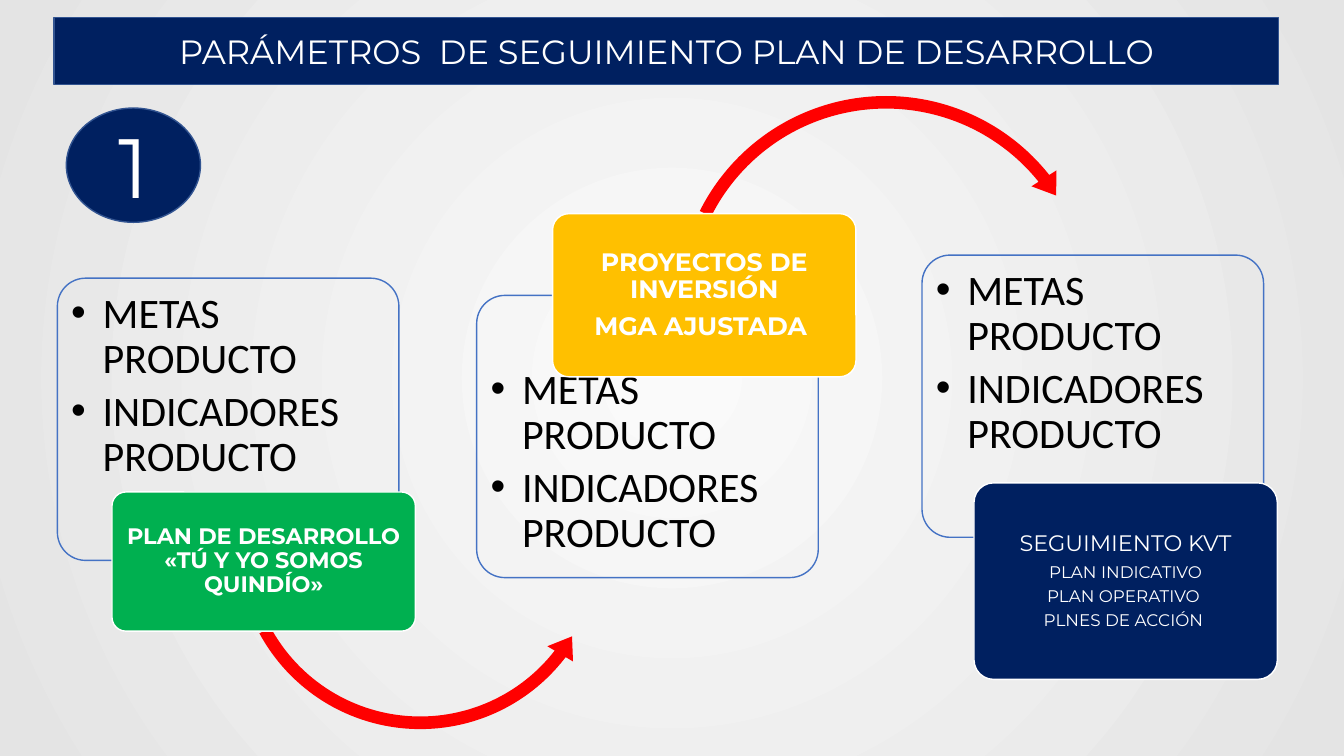
from lxml import etree
from pptx import Presentation
from pptx.dml.color import RGBColor
from pptx.enum.shapes import MSO_SHAPE as Preset
from pptx.enum.text import MSO_ANCHOR as Anchor, PP_ALIGN as Align
from pptx.oxml.ns import qn
from pptx.util import Pt

COLORS = {
    "navy": "002060", "navy_edge": "325491", "blue": "4472C4", "green": "00B050",
    "amber": "FFC000", "red": "FF0000", "white": "FFFFFF", "black": "000000",
    "center": "FAFAFA", "edge": "E4E4E4",
}
TITLE = "PARÁMETROS  DE SEGUIMIENTO PLAN DE DESARROLLO"
STEP_NUMBER = "1"
GOALS = ["METAS PRODUCTO", "INDICADORES PRODUCTO"]
STAGES = [
    {
        "panel": (41, 198.7), "top_inset": 4, "align": Align.JUSTIFY,
        "arrow": (Preset.LEFT_CIRCULAR_ARROW, 163.4, 253.4, 273.6,
                  (0.033, 4.107, 22.536, 90.919, 0.039)),
        "caption": (80, 351.4, 99.4), "fill": "green", "bold": True,
        "lines": [("PLAN DE DESARROLLO «TÚ Y YO SOMOS QUINDÍO»", 16)],
    },
    {
        "panel": (340.5, 211), "top_inset": 46, "align": Align.LEFT,
        "arrow": (Preset.CIRCULAR_ARROW, 478.1, 62.6, 309.6,
                  (0.029, 3.599, 192.862, 123.971, 0.034)),
        "caption": (394.7, 152.6, 116.6), "fill": "amber", "bold": True,
        "lines": [("PROYECTOS DE INVERSIÓN", 18), ("MGA AJUSTADA ", 18)],
    },
    {
        "panel": (658.6, 182.2), "top_inset": 4, "align": Align.LEFT,
        "arrow": None,
        "caption": (695.7, 344.9, 140.4), "fill": "navy", "bold": False,
        "lines": [("SEGUIMIENTO KVT", 16), ("PLAN INDICATIVO", 12),
                  ("PLAN OPERATIVO ", 12), ("PLNES DE ACCIÓN ", 12)],
    },
]
PANEL_SIZE = (244, 201.6)
CAPTION_WIDTH = 216.7
BULLET_INDENT = 22.5


def color(name):
    return RGBColor.from_string(COLORS[name])


def add_block(slide, preset, left, top, width, height, fill=None, line=None, adjustments=()):
    shape = slide.shapes.add_shape(preset, Pt(left), Pt(top), Pt(width), Pt(height))
    shape.shadow.inherit = False
    for index, value in enumerate(adjustments):
        shape.adjustments[index] = value
    if fill:
        shape.fill.solid()
        shape.fill.fore_color.rgb = color(fill)
    else:
        shape.fill.background()
    if line:
        shape.line.color.rgb = color(line)
        shape.line.width = Pt(1)
    else:
        shape.line.fill.background()
    return shape


def set_insets(frame, left, top, right, bottom):
    frame.margin_left, frame.margin_top = Pt(left), Pt(top)
    frame.margin_right, frame.margin_bottom = Pt(right), Pt(bottom)


def write_lines(shape, lines, font, font_color, align=Align.CENTER, anchor=Anchor.MIDDLE,
                bold=False, gap=0, spacing=1.0):
    frame = shape.text_frame
    frame.word_wrap = True
    frame.vertical_anchor = anchor
    for index, (text, size) in enumerate(lines):
        paragraph = frame.paragraphs[0] if index == 0 else frame.add_paragraph()
        paragraph.alignment = align
        paragraph.line_spacing = spacing
        paragraph.space_after = Pt(round(size * gap, 1))
        run = paragraph.add_run()
        run.text = text
        run.font.name = font
        run.font.size = Pt(size)
        run.font.bold = bold
        run.font.color.rgb = color(font_color)


def add_bullets(shape):
    for paragraph in shape.text_frame.paragraphs:
        properties = paragraph._p.get_or_add_pPr()
        properties.set("marL", str(Pt(BULLET_INDENT)))
        properties.set("indent", str(-Pt(BULLET_INDENT)))
        etree.SubElement(properties, qn("a:buFont")).set("typeface", "Arial")
        etree.SubElement(properties, qn("a:buChar")).set("char", "•")


def paint_background(slide):
    fill = slide.background.fill
    fill.gradient()
    for stop, name, position in zip(fill.gradient_stops, ("center", "edge"), (0, 1)):
        stop.color.rgb = color(name)
        stop.position = position
    gradient = slide.element.find(".//" + qn("a:gradFill"))
    linear = gradient.find(qn("a:lin"))
    radial = etree.Element(qn("a:path"), {"path": "circle"})
    etree.SubElement(radial, qn("a:fillToRect"), dict.fromkeys("ltrb", "50000"))
    gradient.replace(linear, radial)


def add_stage(slide, stage):
    panel = add_block(slide, Preset.ROUNDED_RECTANGLE, *stage["panel"], *PANEL_SIZE,
                      line="blue", adjustments=(0.1,))
    set_insets(panel.text_frame, 4, stage["top_inset"], 4, 4)
    write_lines(panel, [(goal, 30) for goal in GOALS], "Calibri", "black",
                stage["align"], Anchor.TOP, gap=0.17, spacing=0.9)
    add_bullets(panel)

    if stage["arrow"]:
        preset, left, top, side, adjustments = stage["arrow"]
        add_block(slide, preset, left, top, side, side, "red", adjustments=adjustments)

    left, top, height = stage["caption"]
    caption = add_block(slide, Preset.ROUNDED_RECTANGLE, left, top, CAPTION_WIDTH, height,
                        stage["fill"], "white", (0.1,))
    set_insets(caption.text_frame, 2, 1.5, 2, 1.5)
    write_lines(caption, stage["lines"], "Montserrat", "white",
                bold=stage["bold"], gap=0.35, spacing=0.9)


def main():
    presentation = Presentation()
    presentation.slide_width, presentation.slide_height = Pt(960), Pt(540)
    slide = presentation.slides.add_slide(presentation.slide_layouts[6])
    paint_background(slide)
    for stage in STAGES:
        add_stage(slide, stage)
    banner = add_block(slide, Preset.RECTANGLE, 38.6, 12.7, 874.8, 47.5, "navy", "navy_edge")
    write_lines(banner, [(TITLE, 24)], "Montserrat", "white")
    badge = add_block(slide, Preset.OVAL, 47.4, 77.2, 95.8, 81.6, "navy", "navy_edge")
    write_lines(badge, [(STEP_NUMBER, 60)], "Montserrat", "white")
    presentation.save("out.pptx")


if __name__ == "__main__":
    main()
